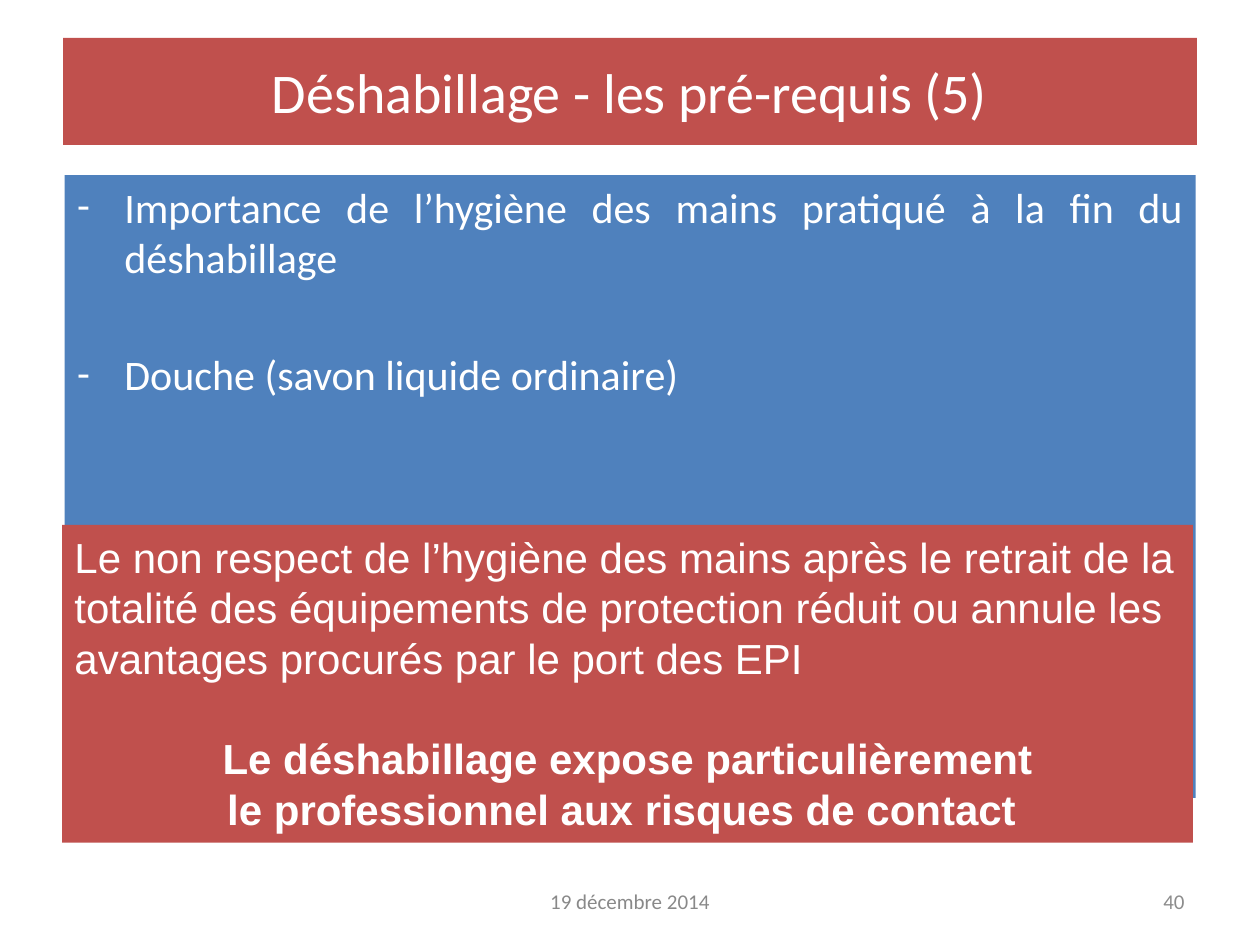
"""Build the slide on undressing prerequisites and hand hygiene."""
from lxml.etree import SubElement
from pptx import Presentation
from pptx.dml.color import RGBColor
from pptx.enum.text import MSO_ANCHOR, MSO_AUTO_SIZE, PP_ALIGN
from pptx.oxml.ns import qn
from pptx.util import Pt

COLORS = {
    "warning": "C0504D",
    "advice": "4F81BD",
    "light": "FFFFFF",
    "footer": "898989",
    "number": "8C8C8C",
}
TITLE_FONT = {"name": "Calibri", "size": Pt(32), "bold": False}
ADVICE_FONT = {"name": "Calibri", "size": Pt(24)}
WARNING_FONT = {"name": "Arial", "size": Pt(24)}
STRONG_FONT = {**WARNING_FONT, "bold": True}
FOOTER_FONT = {"name": "Calibri", "size": Pt(12)}

ADVICE = [
    "Importance de l’hygiène des mains pratiqué à la fin du déshabillage",
    "Douche (savon liquide ordinaire) ",
]
WARNING = (
    "Le non respect de l’hygiène des mains après le retrait de la totalité "
    "des équipements de protection réduit ou annule les avantages procurés "
    "par le port des EPI"
)
EXPOSURE = [
    "Le déshabillage expose particulièrement",
    "le professionnel aux risques de contact ",
]


def apply(target, values):
    """Set each named value on the target."""
    for name, value in values.items():
        setattr(target, name, value)


def place(panel, left, top, width, height, fill=None, anchor=MSO_ANCHOR.TOP):
    """Position a panel and format its frame and fill."""
    apply(panel, {"left": Pt(left), "top": Pt(top),
                  "width": Pt(width), "height": Pt(height)})
    apply(panel.text_frame, {"word_wrap": True, "vertical_anchor": anchor,
                             "auto_size": MSO_AUTO_SIZE.NONE})
    if fill:
        panel.fill.solid()
        panel.fill.fore_color.rgb = RGBColor.from_string(COLORS[fill])
    return panel.text_frame


def add_panel(slide, *box, **look):
    """Add a text panel and return its text frame."""
    return place(slide.shapes.add_textbox(0, 0, 0, 0), *box, **look)


def add_bullet(paragraph, indent):
    """Give a paragraph a hanging dash."""
    properties = paragraph._p.get_or_add_pPr()
    properties.set("marL", str(Pt(indent)))
    properties.set("indent", str(-Pt(indent)))
    SubElement(properties, qn("a:buFont"), typeface="Calibri")
    SubElement(properties, qn("a:buChar"), char="-")


def write(frame, text, font, color, bullet_indent=None, **layout):
    """Write one paragraph after any that the frame already holds."""
    paragraph = frame.add_paragraph() if frame.text else frame.paragraphs[0]
    if bullet_indent:
        add_bullet(paragraph, bullet_indent)
    apply(paragraph, layout)
    run = paragraph.add_run()
    run.text = text
    apply(run.font, font)
    run.font.color.rgb = RGBColor.from_string(COLORS[color])


def add_footer(slide):
    """Add the date and the slide number."""
    date = add_panel(slide, 246, 500.5, 228, 28.75, anchor=MSO_ANCHOR.MIDDLE)
    write(date, "19 décembre 2014", FOOTER_FONT, "footer", alignment=PP_ALIGN.CENTER)
    number = add_panel(slide, 516, 500.5, 168, 28.75, anchor=MSO_ANCHOR.MIDDLE)
    write(number, "40", FOOTER_FONT, "number", alignment=PP_ALIGN.RIGHT)


def add_advice(slide):
    """Add the bulleted hygiene advice."""
    advice = add_panel(slide, 37, 100, 646.25, 356, fill="advice")
    for index, text in enumerate(ADVICE):
        write(advice, text, ADVICE_FONT, "light", bullet_indent=27,
              alignment=PP_ALIGN.JUSTIFY, space_before=Pt(38 * index))


def add_warning(slide):
    """Add the warning and the reminder on exposure."""
    line = Pt(28.8)
    warning = add_panel(slide, 35.5, 300, 646.25, 181.5, fill="warning")
    write(warning, WARNING, WARNING_FONT, "light",
          line_spacing=line, space_after=line)
    for text in EXPOSURE:
        write(warning, text, STRONG_FONT, "light",
              line_spacing=line, alignment=PP_ALIGN.CENTER)


def main():
    """Build and save the slide."""
    deck = Presentation()
    apply(deck, {"slide_width": Pt(720), "slide_height": Pt(540)})
    slide = deck.slides.add_slide(deck.slide_layouts.get_by_name("Title Only"))
    title = place(slide.shapes.title, 36, 21.6, 648, 61.2,
                  fill="warning", anchor=MSO_ANCHOR.MIDDLE)
    write(title, "Déshabillage - les pré-requis (5)", TITLE_FONT, "light",
          alignment=PP_ALIGN.CENTER)
    add_footer(slide)
    add_advice(slide)
    add_warning(slide)
    deck.save("out.pptx")


if __name__ == "__main__":
    main()
